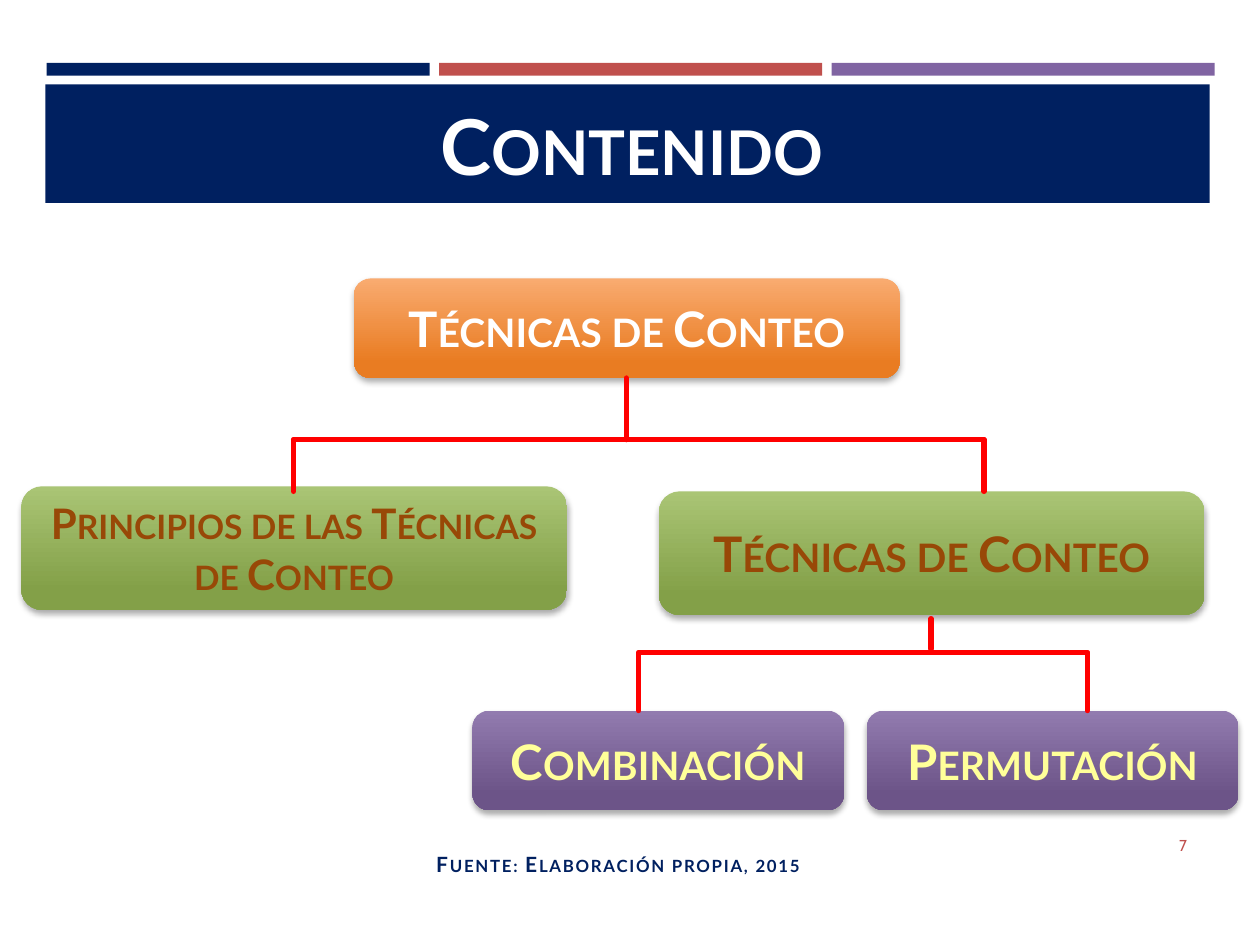
from dataclasses import dataclass

from lxml import etree
from pptx import Presentation
from pptx.dml.color import RGBColor
from pptx.enum.shapes import MSO_CONNECTOR, MSO_SHAPE
from pptx.enum.text import MSO_ANCHOR, PP_ALIGN
from pptx.oxml.ns import qn
from pptx.util import Inches, Pt

RECT, ROUND = MSO_SHAPE.RECTANGLE, MSO_SHAPE.ROUNDED_RECTANGLE
STRAIGHT = MSO_CONNECTOR.STRAIGHT
MIDDLE = MSO_ANCHOR.MIDDLE
CENTER, RIGHT = PP_ALIGN.CENTER, PP_ALIGN.RIGHT


@dataclass(frozen=True)
class Theme:
    font: str = "Lato"
    number_font: str = "Cabin"
    navy: str = "002060"
    red: str = "C0504D"
    purple: str = "8064A2"
    white: str = "FFFFFF"
    brown: str = "984807"
    yellow: str = "FFFF99"
    link: str = "FF0000"
    orange_fade: tuple = ("F9AB70", "E97C22")
    green_fade: tuple = ("AAC575", "83A048")
    purple_fade: tuple = ("927BAF", "6C5488")
    title_size: int = 44
    node_size: int = 28
    long_node_size: int = 24
    source_size: int = 12
    number_size: int = 9
    link_width: int = 3


THEME = Theme()


def inches(*values):
    return [Inches(v) for v in values]


def write(shape, text, size, color, align=CENTER, font=THEME.font,
          bold=True, small_caps=True, spacing=None):
    """Put one formatted run into a shape."""
    tf = shape.text_frame
    tf.word_wrap = True
    tf.vertical_anchor = MIDDLE
    p = tf.paragraphs[0]
    p.alignment = align
    r = p.add_run()
    r.text = text
    for name, value in {"name": font, "size": Pt(size), "bold": bold}.items():
        setattr(r.font, name, value)
    r.font.color.rgb = RGBColor.from_string(color)
    if small_caps:
        r.font._element.set("cap", "small")
    if spacing:
        r.font._element.set("spc", str(spacing * 100))


def add_bar(s, box, color):
    """Flat rectangle without outline."""
    sp = s.shapes.add_shape(RECT, *inches(*box))
    sp.shadow.inherit = False
    sp.fill.solid()
    sp.fill.fore_color.rgb = RGBColor.from_string(color)
    sp.line.fill.background()


def add_shadow(sp):
    """Soft shadow falling straight down."""
    sp.shadow.inherit = False
    effects = sp._element.spPr.find(qn("a:effectLst"))
    shadow = etree.SubElement(effects, qn("a:outerShdw"), blurRad=str(Pt(3.5)),
                              dist=str(Pt(2.2)), dir="5400000", rotWithShape="0")
    color = etree.SubElement(shadow, qn("a:srgbClr"), val="000000")
    etree.SubElement(color, qn("a:alpha"), val="32000")


def add_node(s, box, text, fade, color, size=THEME.node_size):
    """Rounded box of the tree with a vertical gradient."""
    sp = s.shapes.add_shape(ROUND, *inches(*box))
    sp.fill.gradient()
    sp.fill.gradient_angle = 270
    for stop, position, tone in zip(sp.fill.gradient_stops, (0, 0.84), fade):
        stop.position = position
        stop.color.rgb = RGBColor.from_string(tone)
    sp.line.fill.background()
    add_shadow(sp)
    write(sp, text, size, color)


def add_link(s, x1, y1, x2, y2):
    """Round-ended straight line without shadow."""
    line = s.shapes.add_connector(STRAIGHT, *inches(x1, y1, x2, y2))
    line.line.width = Pt(THEME.link_width)
    line.line.color.rgb = RGBColor.from_string(THEME.link)
    line.line._ln.set("cap", "rnd")
    etree.SubElement(line._element.spPr, qn("a:effectLst"))


def add_fork(s, stem_x, stem_top, stem_end, bar_y, left, right, bottom):
    """A stem, a crossbar and two branches."""
    add_link(s, stem_x, stem_top, stem_x, stem_end)
    add_link(s, left, bar_y, right, bar_y)
    for x in (left, right):
        add_link(s, x, bar_y, x, bottom)


def add_text(s, box, text, size, color, **style):
    sp = s.shapes.add_textbox(*inches(*box))
    write(sp, text, size, color, **style)


def add_title(s, box, text):
    title = s.shapes.title
    for name, value in zip(("left", "top", "width", "height"), inches(*box)):
        setattr(title, name, value)
    write(title, text, THEME.title_size, THEME.white)


def main():
    t = THEME
    prs = Presentation()
    prs.slide_width, prs.slide_height = inches(10, 7.5)
    s = prs.slides.add_slide(prs.slide_layouts[5])

    # Header: three equal bars over the title band
    for column, color in enumerate((t.navy, t.red, t.purple)):
        add_bar(s, (0.37 + 3.115 * column, 0.5, 3.04, 0.1), color)
    add_bar(s, (0.36, 0.67, 9.24, 0.94), t.navy)
    # The title is moved in front of its band
    s.shapes._spTree.append(s.shapes.title._element)
    add_title(s, (2.76, 0.71, 4.51, 0.87), "Contenido")

    # Tree: root, two topics, two kinds
    wide, narrow, low, tall = 4.33, 2.95, 0.79, 0.98
    add_node(s, (2.81, 2.21, wide, low), "Técnicas de Conteo",
             t.orange_fade, t.white)
    add_node(s, (0.17, 3.86, wide, tall), "Principios de las Técnicas de Conteo",
             t.green_fade, t.brown, t.long_node_size)
    add_node(s, (5.23, 3.9, wide, tall), "Técnicas de Conteo",
             t.green_fade, t.brown)
    for x, text in ((3.75, "Combinación"), (6.88, "Permutación")):
        add_node(s, (x, 5.64, narrow, low), text, t.purple_fade, t.yellow)

    # Links between levels
    add_fork(s, 4.97, 3, 3.49, 3.49, 2.33, 7.81, 3.9)
    add_fork(s, 7.39, 4.91, 5.15, 5.18, 5.07, 8.63, 5.64)

    # Footer: source and page number
    add_text(s, (2.82, 6.71, 4.61, 0.3), "Fuente: Elaboración propia, 2015",
             t.source_size, t.navy, spacing=1)
    add_text(s, (8.66, 6.51, 0.86, 0.4), "7", t.number_size, t.red, align=RIGHT,
             font=t.number_font, bold=False, small_caps=False)

    prs.save("out.pptx")


if __name__ == "__main__":
    main()
